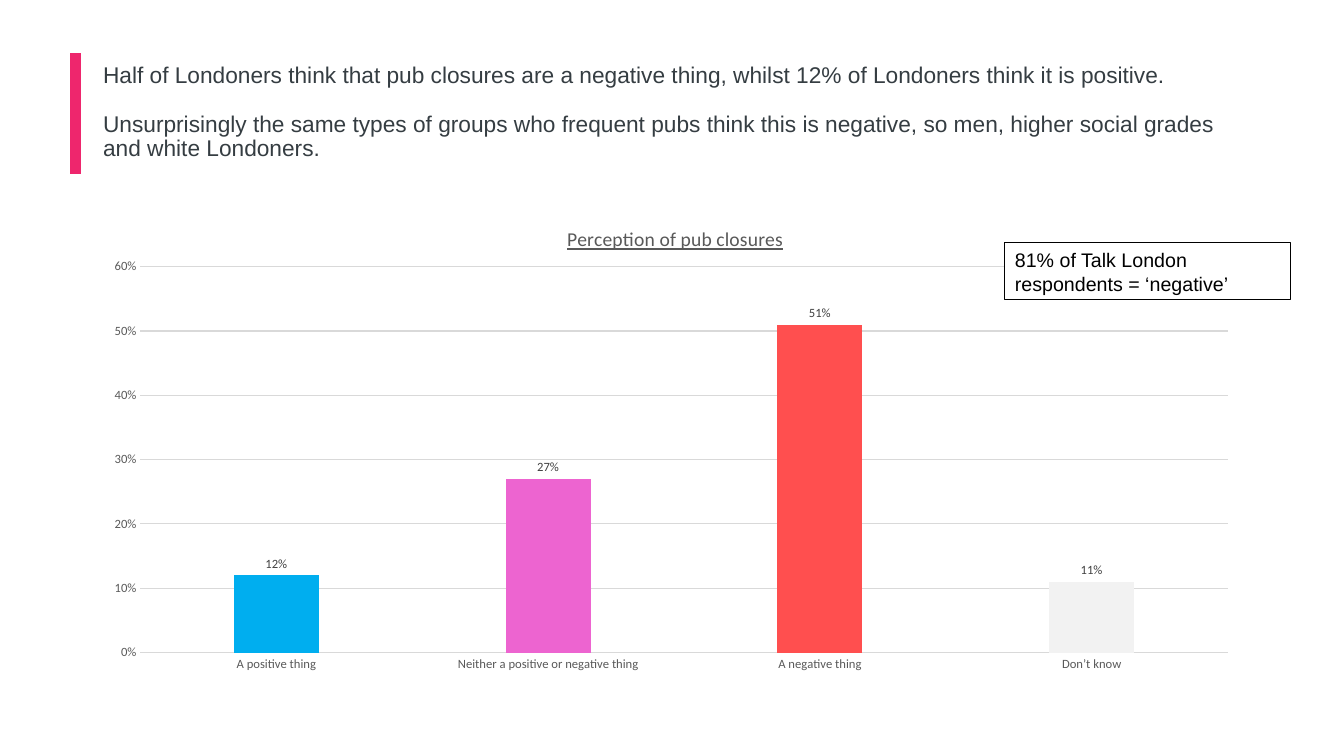
import dataclasses

import pptx
import pptx.chart.data
import pptx.dml.color
import pptx.enum.chart
import pptx.enum.shapes
import pptx.enum.text
import pptx.oxml
import pptx.oxml.ns
import pptx.util

SCALE = 914400 / 100.8


@dataclasses.dataclass(frozen=True)
class Theme:
    text_font: str = "Arial"
    chart_font: str = "Calibri"
    accent: str = "EE266D"
    heading: str = "353D42"
    black: str = "000000"
    white: str = "FFFFFF"
    axis: str = "595959"
    label: str = "404040"
    grid: str = "D9D9D9"
    bars: tuple = ("00AEEF", "ED64D0", "FF4F4F", "F2F2F2")
    heading_size: float = 16.2
    callout_size: float = 14
    chart_title_size: float = 14
    chart_size: float = 10
    axis_size: float = 9
    hairline: float = 0.75


THEME = Theme()

HEADING = (
    "Half of Londoners think that pub closures are a negative thing, "
    "whilst 12% of Londoners think it is positive.",
    "Unsurprisingly the same types of groups who frequent pubs think this is "
    "negative, so men, higher social grades and white Londoners.",
)
PERCEPTIONS = {
    "A positive thing": 0.12,
    "Neither a positive or negative thing": 0.27,
    "A negative thing": 0.51,
    "Don’t know": 0.11,
}


def px(length):
    return pptx.util.Emu(round(length * SCALE))


def rgb(value):
    return pptx.dml.color.RGBColor.from_string(value)


def style_font(font, name, size, color):
    font.name = name
    font.size = pptx.util.Pt(size)
    font.color.rgb = rgb(color)


def paint(target, color):
    target.fill.solid()
    target.fill.fore_color.rgb = rgb(color)


def draw_line(line, color):
    line.color.rgb = rgb(color)
    line.width = pptx.util.Pt(THEME.hairline)


def add_rectangle(page, box, color):
    shape = page.shapes.add_shape(
        pptx.enum.shapes.MSO_SHAPE.RECTANGLE, *map(px, box))
    shape.shadow.inherit = False
    paint(shape, color)
    return shape


def add_heading(page, box):
    left, top, width, height = box
    bar = add_rectangle(page, (left - 23, top + 13, 11, height - 25), THEME.accent)
    bar.line.fill.background()

    title = page.shapes.title
    title.left, title.top, title.width, title.height = map(px, box)
    frame = title.text_frame
    frame.word_wrap = True
    frame.auto_size = pptx.enum.text.MSO_AUTO_SIZE.NONE
    frame.vertical_anchor = pptx.enum.text.MSO_ANCHOR.MIDDLE
    for index, sentence in enumerate(HEADING):
        para = frame.add_paragraph() if index else frame.paragraphs[0]
        para.alignment = pptx.enum.text.PP_ALIGN.LEFT
        para.line_spacing = 0.9
        para.space_before = pptx.util.Pt(17 if index else 0)
        span = para.add_run()
        span.text = sentence
        style_font(span.font, THEME.text_font, THEME.heading_size, THEME.heading)


def set_layout(parent, position, **fractions):
    """Fix the place of a chart part, as fractions of the chart's size."""
    for old in parent.findall(pptx.oxml.ns.qn("c:layout")):
        parent.remove(old)
    modes = "".join(f'<c:{axis}Mode val="edge"/>' for axis in "xy")
    target = '<c:layoutTarget val="inner"/>' if "w" in fractions else ""
    values = "".join(f'<c:{key} val="{value:.3f}"/>'
                     for key, value in fractions.items())
    parent.insert(position, pptx.oxml.parse_xml(
        f'<c:layout {pptx.oxml.ns.nsdecls("c")}><c:manualLayout>'
        f'{target}{modes}{values}</c:manualLayout></c:layout>'))


def style_axes(chart):
    for axis in (chart.category_axis, chart.value_axis):
        axis.major_tick_mark = pptx.enum.chart.XL_TICK_MARK.NONE
        style_font(axis.tick_labels.font, THEME.chart_font,
                   THEME.axis_size, THEME.axis)
    draw_line(chart.category_axis.format.line, THEME.grid)
    values = chart.value_axis
    values.format.line.fill.background()
    values.minimum_scale, values.maximum_scale, values.major_unit = 0, 0.6, 0.1
    values.tick_labels.number_format = "0%"
    values.tick_labels.number_format_is_linked = False
    draw_line(values.major_gridlines.format.line, THEME.grid)


def style_bars(plot):
    plot.gap_width, plot.overlap = 219, -27
    plot.vary_by_categories = False
    series = plot.series[0]
    paint(series.format, THEME.bars[0])
    for index, color in enumerate(THEME.bars[1:], 1):
        paint(series.points[index].format, color)
    labels = series.data_labels
    labels.show_value = True
    labels.position = pptx.enum.chart.XL_LABEL_POSITION.OUTSIDE_END
    labels.number_format = "0%"
    labels.number_format_is_linked = False
    style_font(labels.font, THEME.chart_font, THEME.axis_size, THEME.label)


def add_perception_chart(page, box):
    data = pptx.chart.data.CategoryChartData(number_format="0%")
    data.categories = list(PERCEPTIONS)
    data.add_series("Series 1", list(PERCEPTIONS.values()))
    chart = page.shapes.add_chart(
        pptx.enum.chart.XL_CHART_TYPE.COLUMN_CLUSTERED,
        *map(px, box), data).chart
    chart.has_legend = False
    style_font(chart.font, THEME.chart_font, THEME.chart_size, THEME.black)

    chart.has_title = True
    span = chart.chart_title.text_frame.paragraphs[0].add_run()
    span.text = "Perception of pub closures"
    style_font(span.font, THEME.chart_font, THEME.chart_title_size, THEME.axis)
    span.font.bold = False
    span.font.underline = True
    chart.chart_title.include_in_layout = False

    style_axes(chart)
    style_bars(chart.plots[0])
    width, height = box[2:]
    set_layout(chart.chart_title._element, 1, x=471 / width, y=20 / height)
    plot_area = chart._chartSpace.chart.plotArea
    set_layout(plot_area, 0, x=48 / width, y=65 / height,
               w=1087 / width, h=386 / height)


def add_callout(page, box):
    callout = add_rectangle(page, box, THEME.white)
    draw_line(callout.line, THEME.black)
    frame = callout.text_frame
    frame.word_wrap = True
    frame.auto_size = pptx.enum.text.MSO_AUTO_SIZE.SHAPE_TO_FIT_TEXT
    frame.vertical_anchor = pptx.enum.text.MSO_ANCHOR.TOP
    para = frame.paragraphs[0]
    para.alignment = pptx.enum.text.PP_ALIGN.LEFT
    span = para.add_run()
    span.text = "81% of Talk London respondents = ‘negative’"
    style_font(span.font, THEME.text_font, THEME.callout_size, THEME.black)


def main():
    deck = pptx.Presentation()
    deck.slide_width, deck.slide_height = px(1344), px(756)
    page = deck.slides.add_slide(deck.slide_layouts.get_by_name("Title Only"))
    add_heading(page, (93, 40, 1159, 146))
    add_perception_chart(page, (93, 202, 1159, 480))
    add_callout(page, (1005, 243, 286, 57))
    deck.save("out.pptx")


if __name__ == "__main__":
    main()
